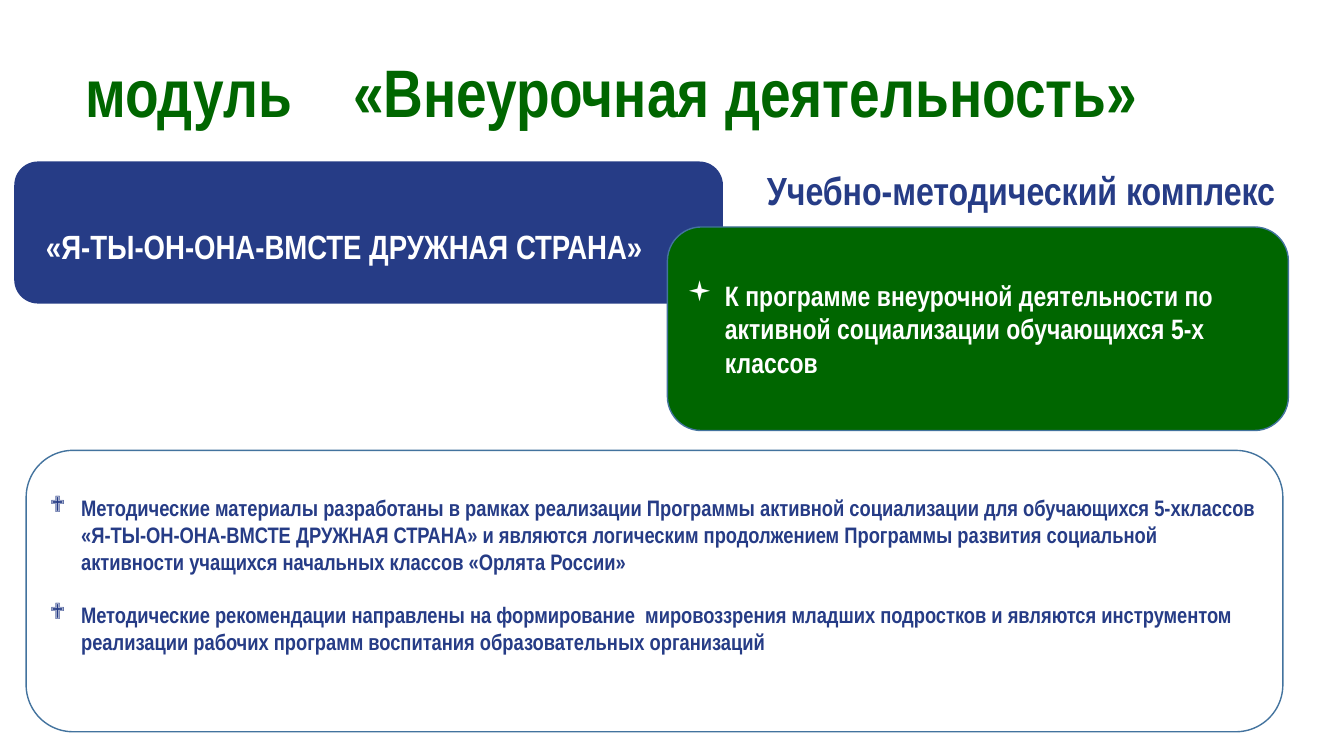
from lxml import etree
from pptx import Presentation
from pptx.dml.color import RGBColor
from pptx.enum.shapes import MSO_SHAPE
from pptx.enum.text import MSO_ANCHOR, MSO_AUTO_SIZE, PP_ALIGN
from pptx.oxml.ns import qn
from pptx.util import Cm, Pt

ROUND = MSO_SHAPE.ROUNDED_RECTANGLE
MIDDLE = MSO_ANCHOR.MIDDLE
GROW = MSO_AUTO_SIZE.SHAPE_TO_FIT_TEXT
LEFT = PP_ALIGN.LEFT

GREEN, BLUE, WHITE, EDGE = "006600", "263C86", "FFFFFF", "43739E"


def color(code):
    return RGBColor.from_string(code)


class Page:
    """Holds the style and the current slide."""
    face = "Arial Narrow"

    def __init__(self, slide):
        self.shapes = slide.shapes

    def style(self, para, text, size, ink):
        para.text = text
        para.alignment = LEFT
        font = para.font
        font.name, font.size, font.bold = self.face, Pt(size), True
        font.color.rgb = color(ink)

    def label(self, box, text, size, ink, tab=None):
        frame = self.shapes.add_textbox(*map(Cm, box)).text_frame
        frame.word_wrap = True
        frame.auto_size = GROW
        para = frame.paragraphs[0]
        self.style(para, text, size, ink)
        if tab:
            stops = etree.SubElement(para._p.get_or_add_pPr(), qn("a:tabLst"))
            etree.SubElement(stops, qn("a:tab"), pos=str(Cm(tab)), algn="l")

    def panel(self, box, fill, edge=None):
        shape = self.shapes.add_shape(ROUND, *map(Cm, box))
        shape.shadow.inherit = False
        shape.fill.solid()
        shape.fill.fore_color.rgb = color(fill)
        if edge:
            shape.line.color.rgb = color(edge)
            shape.line.width = Pt(1)
        else:
            shape.line.fill.background()
        return shape

    def bullets(self, shape, items, size, ink, mark, indent, gap=0, foot=0.13):
        frame = shape.text_frame
        frame.word_wrap = True
        frame.vertical_anchor = MIDDLE
        frame.margin_bottom = Cm(foot)
        for i, item in enumerate(items):
            para = frame.add_paragraph() if i else frame.paragraphs[0]
            self.style(para, item, size, ink)
            if i:
                para.space_before = Pt(gap)
            props = para._p.get_or_add_pPr()
            props.set("marL", str(Cm(indent)))
            props.set("indent", str(-Cm(indent)))
            etree.SubElement(props, qn("a:buFont"), typeface="Wingdings")
            etree.SubElement(props, qn("a:buChar"), char=mark)
            # Bullet marks come before the default run style
            base = props.find(qn("a:defRPr"))
            if base is not None:
                props.append(base)


def main():
    deck = Presentation()
    deck.slide_width, deck.slide_height = Cm(33.87), Cm(19.05)
    page = Page(deck.slides.add_slide(deck.slide_layouts[6]))

    # Title
    page.label((1.9, 1.14, 29.8, 2.31), "модуль\t«Внеурочная деятельность»",
               48, GREEN, tab=6.75)

    # Programme name
    page.panel((0.36, 4.07, 17.86, 3.58), BLUE)
    page.label((0.91, 5.56, 17.58, 1.27),
               "«Я-ТЫ-ОН-ОНА-ВМСТЕ ДРУЖНАЯ СТРАНА»", 24, WHITE)

    # Teaching kit
    page.label((19.08, 4.07, 14.3, 1.45), "Учебно-методический комплекс",
               28, BLUE)
    kit = page.panel((16.82, 5.72, 15.65, 5.13), GREEN, EDGE)
    page.bullets(kit, [
        "К программе внеурочной деятельности по активной социализации "
        "обучающихся 5-х классов",
    ], 20, WHITE, "▪", 0.95)

    # Description
    about = page.panel((0.66, 11.35, 31.67, 7.09), WHITE, EDGE)
    page.bullets(about, [
        "Методические материалы разработаны в рамках реализации Программы "
        "активной социализации для обучающихся 5-хклассов "
        "«Я-ТЫ-ОН-ОНА-ВМСТЕ ДРУЖНАЯ СТРАНА» и являются логическим "
        "продолжением Программы развития социальной активности учащихся "
        "начальных классов «Орлята России»",
        "Методические рекомендации направлены на формирование  "
        "мировоззрения младших подростков и являются инструментом "
        "реализации рабочих программ воспитания образовательных организаций",
    ], 16, BLUE, "❖", 0.79, gap=19, foot=0.96)

    deck.save("out.pptx")


if __name__ == "__main__":
    main()
